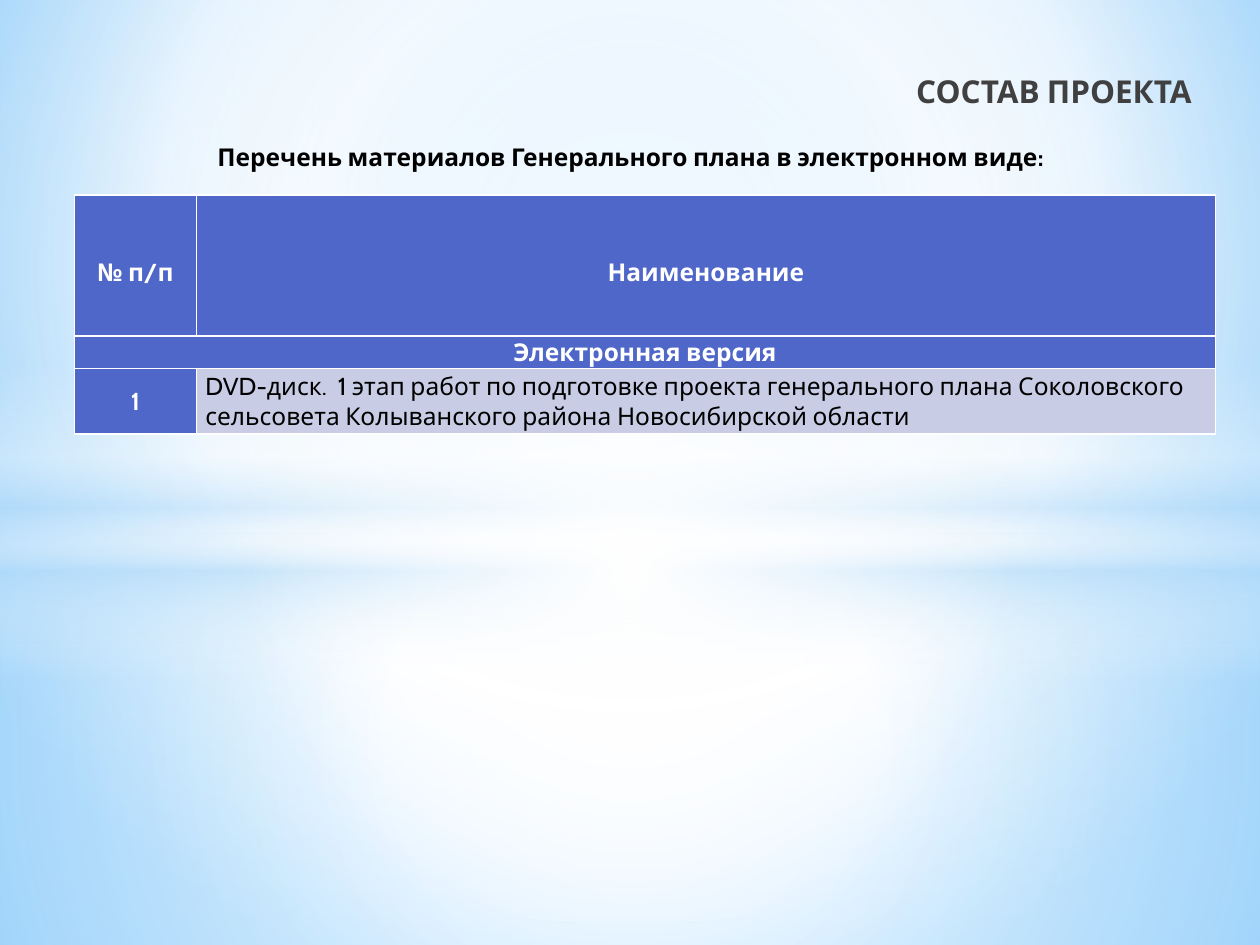
from lxml.etree import Element, SubElement
from pptx import Presentation
from pptx.dml.color import RGBColor
from pptx.enum.shapes import MSO_SHAPE
from pptx.enum.text import MSO_ANCHOR, PP_ALIGN
from pptx.oxml.ns import qn
from pptx.util import Cm, Pt

FONT = "Cabin"
BLACK = RGBColor(0x00, 0x00, 0x00)
WHITE = RGBColor(0xFF, 0xFF, 0xFF)
GRAY = RGBColor(0x40, 0x40, 0x40)
BLUE = RGBColor(0x4E, 0x67, 0xC8)
PALE = RGBColor(0xC8, 0xCD, 0xE5)
SKY = RGBColor(0x9E, 0xD5, 0xFF)
DEEP = RGBColor(0x5B, 0xB9, 0xFF)
MIST = RGBColor(0xB4, 0xDC, 0xFA)
MID = (50, 50, 50, 50)


def blend(root, stops, focus=None):
    """Swap the solid fill under root for a gradient: round a focus, or downwards."""
    grad = Element(qn("a:gradFill"), rotWithShape="1")
    items = SubElement(grad, qn("a:gsLst"))
    for pos, color, alpha in stops:
        stop = SubElement(items, qn("a:gs"), pos=str(pos * 1000))
        tint = SubElement(stop, qn("a:srgbClr"), val=str(color))
        if alpha < 100:
            SubElement(tint, qn("a:alpha"), val=str(alpha * 1000))
    if focus:
        way = SubElement(grad, qn("a:path"), path="circle")
        sides = {side: str(part * 1000) for side, part in zip("ltrb", focus)}
        SubElement(way, qn("a:fillToRect"), **sides)
    else:
        SubElement(grad, qn("a:lin"), ang="5400000", scaled="0")
    old = next(root.iter(qn("a:solidFill")))
    old.getparent().replace(old, grad)


def add_glow(slide, kind, top, height, stops, focus=None):
    glow = slide.shapes.add_shape(kind, 0, Cm(top), Cm(25.4), Cm(height))
    glow.shadow.inherit = False
    glow.line.fill.background()
    glow.fill.solid()
    blend(glow.element.spPr, stops, focus)


def set_text(frame, text, size, color, align, bold=True, space=None):
    frame.text = text
    frame.word_wrap = True
    para = frame.paragraphs[0]
    para.alignment = align
    para.line_spacing = space
    font = para.runs[0].font
    font.name, font.size, font.bold = FONT, Pt(size), bold
    font.color.rgb = color


def set_edges(cell):
    props = cell._tc.get_or_add_tcPr()
    for spot, side in enumerate(("lnL", "lnR", "lnT", "lnB")):
        line = Element(qn(f"a:{side}"), w=str(Pt(1)))
        fill = SubElement(line, qn("a:solidFill"))
        SubElement(fill, qn("a:srgbClr"), val=str(WHITE))
        props.insert(spot, line)


def set_cell(cell, text, fill=BLUE, color=WHITE, align=PP_ALIGN.CENTER,
             bold=True, space=None):
    set_text(cell.text_frame, text, 14, color, align, bold, space)
    cell.vertical_anchor = MSO_ANCHOR.MIDDLE
    cell.margin_left = cell.margin_right = Cm(0.18)
    cell.margin_top = cell.margin_bottom = 0


def add_list(slide):
    widths, heights = (2.46, 20.54), (2.84, 0.66, 1.32)
    table = slide.shapes.add_table(3, 2, Cm(1.5), Cm(3.93), Cm(sum(widths)),
                                   Cm(sum(heights))).table
    for col, width in zip(table.columns, widths):
        col.width = Cm(width)
    for row, height in zip(table.rows, heights):
        row.height = Cm(height)
    for cell in table.iter_cells():
        cell.fill.solid()
        cell.fill.fore_color.rgb = BLUE
        set_edges(cell)

    # Header, section row, then the one entry
    set_cell(table.cell(0, 0), "№ п/п", space=1.5)
    set_cell(table.cell(0, 1), "Наименование", space=1.5)
    table.cell(1, 0).merge(table.cell(1, 1))
    set_cell(table.cell(1, 0), "Электронная версия")
    set_cell(table.cell(2, 0), "1")
    entry = table.cell(2, 1)
    set_cell(entry, "DVD-диск.  1 этап работ по подготовке проекта генерального "
             "плана Соколовского сельсовета Колыванского района "
             "Новосибирской области", color=BLACK, align=PP_ALIGN.LEFT, bold=False)
    entry.fill.fore_color.rgb = PALE


def add_back(slide):
    slide.background.fill.solid()
    blend(slide.element, [(0, SKY, 100), (60, WHITE, 100), (100, DEEP, 100)],
          (20, 10, 20, 60))
    rect = MSO_SHAPE.RECTANGLE
    add_glow(slide, rect, 10.74, 8.31,
             [(0, WHITE, 91), (37, WHITE, 76), (100, MIST, 79)], MID)
    add_glow(slide, rect, 0, 10.74,
             [(0, WHITE, 89), (48, WHITE, 62), (100, MIST, 79)], MID)
    add_glow(slide, rect, 7.37, 6.35,
             [(0, WHITE, 0), (29, WHITE, 30), (45, MIST, 40),
              (55, WHITE, 26), (65, MIST, 60), (100, WHITE, 0)])
    add_glow(slide, MSO_SHAPE.OVAL, 4.45, 14.17,
             [(0, WHITE, 100), (54, WHITE, 0)], MID)


def add_heads(slide):
    # Subtitle
    box = slide.shapes.add_textbox(Cm(2.31), Cm(2.72), Cm(20.8), Cm(0.86))
    box.text_frame.vertical_anchor = MSO_ANCHOR.MIDDLE
    set_text(box.text_frame,
             "Перечень материалов Генерального плана в электронном виде:",
             14, BLACK, PP_ALIGN.CENTER)

    # Title, brought in front of the background
    title = slide.shapes.title
    title.left, title.top = Cm(2.69), Cm(1.32)
    title.width, title.height = Cm(21.59), Cm(1.6)
    title.text_frame.vertical_anchor = MSO_ANCHOR.TOP
    set_text(title.text_frame, "СОСТАВ ПРОЕКТА", 18, GRAY, PP_ALIGN.RIGHT)
    box.element.addnext(title.element)


def main():
    deck = Presentation()
    deck.slide_width, deck.slide_height = Cm(25.4), Cm(19.05)
    slide = deck.slides.add_slide(deck.slide_layouts[5])
    add_back(slide)
    add_heads(slide)
    add_list(slide)
    deck.save("out.pptx")


if __name__ == "__main__":
    main()
